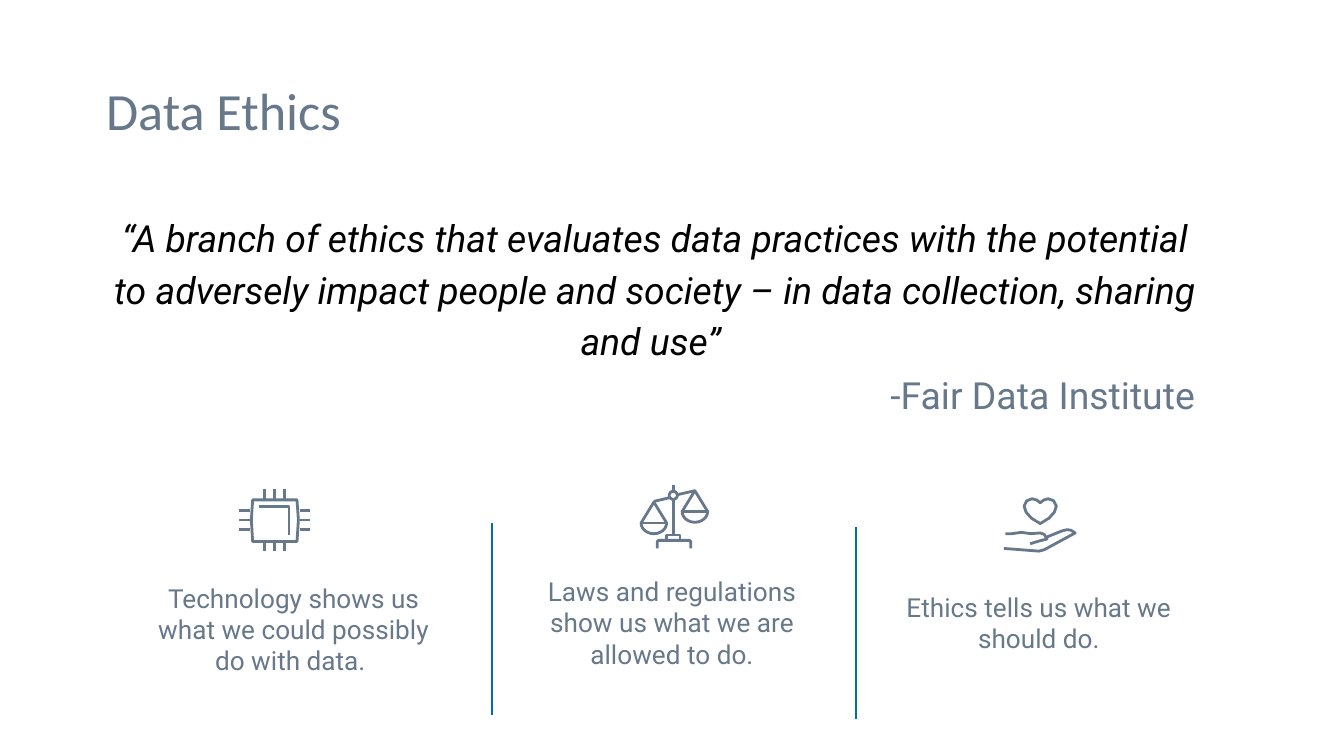
import math
from dataclasses import dataclass

import pptx
import pptx.util
import pptx.dml.color
import pptx.enum.shapes
import pptx.enum.text
import pptx.oxml.ns
from lxml import etree

W = pptx.util.Inches(10)
H = pptx.util.Emu(W * 9 // 16)
UNIT = pptx.util.Inches(0.01)  # icon grid step
COLORS = {"slate": "67788A", "black": "000000", "blue": "00719F"}
ALIGN = pptx.enum.text.PP_ALIGN
Point = tuple[float, float]


def across(percent: float) -> int:
    return round(W * percent / 100)


def down(percent: float) -> int:
    return round(H * percent / 100)


@dataclass
class Box:
    """Place and size in percent of the slide."""
    x: float
    y: float
    w: float
    h: float

    def emu(self) -> tuple[int, int, int, int]:
        return across(self.x), down(self.y), across(self.w), down(self.h)


@dataclass
class Stroke:
    points: list[Point]
    closed: bool = False


@dataclass
class Column:
    text: str
    box: Box
    icon: list[Stroke]
    icon_x: float
    icon_y: float


def rgb(name: str) -> pptx.dml.color.RGBColor:
    return pptx.dml.color.RGBColor.from_string(COLORS[name])


def format_paragraph(p, size: float, align, color: str = "slate", font: str = "Roboto",
                     spacing: float = 1.0, italic: bool = False,
                     right_indent: float = 0) -> None:
    p.alignment, p.line_spacing = align, spacing
    p.font.name, p.font.size, p.font.italic = font, pptx.util.Pt(size), italic
    p.font.color.rgb = rgb(color)
    if right_indent:
        p._p.get_or_add_pPr().set("marR", str(pptx.util.Inches(right_indent)))


def add_text_frame(s, box: Box, inset: float):
    tf = s.shapes.add_textbox(*box.emu()).text_frame
    tf.word_wrap = True
    tf.margin_top = tf.margin_bottom = pptx.util.Inches(inset)
    return tf


def add_line(s, start: Point, end: Point, color: str, width: float) -> None:
    """Straight line between two points in EMU."""
    line = s.shapes.add_connector(pptx.enum.shapes.MSO_CONNECTOR.STRAIGHT, *start, *end)
    line.line.color.rgb, line.line.width = rgb(color), pptx.util.Pt(width)
    etree.SubElement(line._element.spPr, pptx.oxml.ns.qn("a:effectLst"))


def draw_icon(s, strokes: list[Stroke], left: float, top: float) -> None:
    for stroke in strokes:
        pts = [(round(across(left) + x * UNIT), round(down(top) + y * UNIT))
               for x, y in stroke.points]
        if len(pts) == 2:
            add_line(s, *pts, "slate", 1.5)
            continue
        builder = s.shapes.build_freeform(*pts[0])
        builder.add_line_segments(pts[1:], close=stroke.closed)
        sp = builder.convert_to_shape()
        sp.shadow.inherit = False
        sp.fill.background()
        sp.line.color.rgb, sp.line.width = rgb("slate"), pptx.util.Pt(1.5)


def arc(cx: float, cy: float, rx: float, ry: float, sweep: int) -> list[Point]:
    """Points clockwise from the right end of an ellipse."""
    return [(cx + rx * math.cos(math.radians(a)), cy + ry * math.sin(math.radians(a)))
            for a in range(0, sweep + 1, 15)]


def chip() -> list[Stroke]:
    pins = [Stroke([(x, y), (x, y + 8)]) for x in (19, 26.5, 34) for y in (0, 38)]
    pins += [Stroke([(x, y), (x + 8, y)]) for y in (16, 23, 30) for x in (0, 45)]
    body = Stroke([(10, 8), (43, 8), (44, 23), (43, 39), (10, 39), (9, 23)], True)
    return pins + [body, Stroke([(15, 13), (37, 13), (37, 34)])]


def scales() -> list[Stroke]:
    strokes = []
    for cx, cy in ((10.5, 28), (41, 19.5)):
        strokes.append(Stroke([(cx, cy - 15.5)] + arc(cx, cy, 9.5, 8, 180), True))
        strokes.append(Stroke([(cx - 9.5, cy), (cx + 9.5, cy)]))
    return strokes + [
        Stroke([(10.5, 12), (23, 9)]), Stroke([(28, 7), (41, 4)]),  # beam
        Stroke([(25, 0), (25, 5)]), Stroke([(25, 10), (25, 37)]),  # post
        Stroke(arc(25, 7.5, 3, 3, 345), True),
        Stroke([(20, 41), (20, 37), (30, 37), (30, 41)], True),
        Stroke([(13, 47), (13, 42), (14, 41), (37, 41), (38, 42), (38, 47)])]


def heart_in_hand() -> list[Stroke]:
    half = [(27, 13), (24.5, 11), (21, 10), (17, 11.5), (15, 15.5),
            (16.5, 20), (20.5, 24.5), (27, 28.5)]
    mirrored = [(54 - x, y) for x, y in half[-2:0:-1]]
    return [
        Stroke(half + mirrored, True),
        Stroke([(1, 36), (6, 36), (13, 35), (20, 36), (27, 35.5), (30, 36.5),
                (32, 40), (26, 41.5), (19.5, 43.5)]),
        Stroke([(32, 38.5), (43, 34), (47, 33), (50, 33.5), (53, 35.5),
                (30, 48), (26, 49), (0, 47)])]


COLUMNS = [
    Column("Technology shows us what we could possibly do with data. ",
           Box(9.6, 75.2, 24.5, 16.2), chip(), 17.8, 64.7),
    Column("Laws and regulations show us what we are allowed to do.",
           Box(37.4, 74.3, 25.2, 16.2), scales(), 47.6, 64.2),
    Column("Ethics tells us what we should do.",
           Box(66, 76.4, 22.6, 11.9), heart_in_hand(), 74.7, 64.2),
]
DIVIDERS = [(36.6, 69.2), (63.7, 69.7)]  # x and top
DIVIDER_HEIGHT = 25.4


def main() -> None:
    prs = pptx.Presentation()
    prs.slide_width, prs.slide_height = W, H
    s = prs.slides.add_slide(prs.slide_layouts[5])

    # Title
    title = s.shapes.title
    title.left, title.top, title.width, title.height = Box(6.9, 5.3, 86.2, 19.4).emu()
    tf = title.text_frame
    tf.text = "Data Ethics"
    tf.vertical_anchor = pptx.enum.text.MSO_ANCHOR.MIDDLE
    format_paragraph(tf.paragraphs[0], 28, ALIGN.LEFT, font="Calibri", spacing=0.9)

    # Quotation and its source
    tf = add_text_frame(s, Box(6.9, 26.7, 86.2, 35.7), 0.05)
    p = tf.paragraphs[0]
    p.text = ("“A branch of ethics that evaluates data practices with the potential to adversely "
              "impact people and society – in data collection, sharing and use” ")
    format_paragraph(p, 20, ALIGN.CENTER, "black", spacing=1.15, italic=True, right_indent=0.25)
    p = tf.add_paragraph()
    p.text = "-Fair Data Institute "
    format_paragraph(p, 20, ALIGN.RIGHT, spacing=1.15, right_indent=0.25)
    p.space_before = pptx.util.Pt(1.5)

    # Three columns with icons
    for column in COLUMNS:
        tf = add_text_frame(s, column.box, 0.1)
        tf.text = column.text
        format_paragraph(tf.paragraphs[0], 14, ALIGN.CENTER)
        draw_icon(s, column.icon, column.icon_x, column.icon_y)

    # Dividers
    for x, top in DIVIDERS:
        add_line(s, (across(x), down(top)), (across(x), down(top + DIVIDER_HEIGHT)), "blue", 0.75)

    prs.save("out.pptx")


if __name__ == "__main__":
    main()
